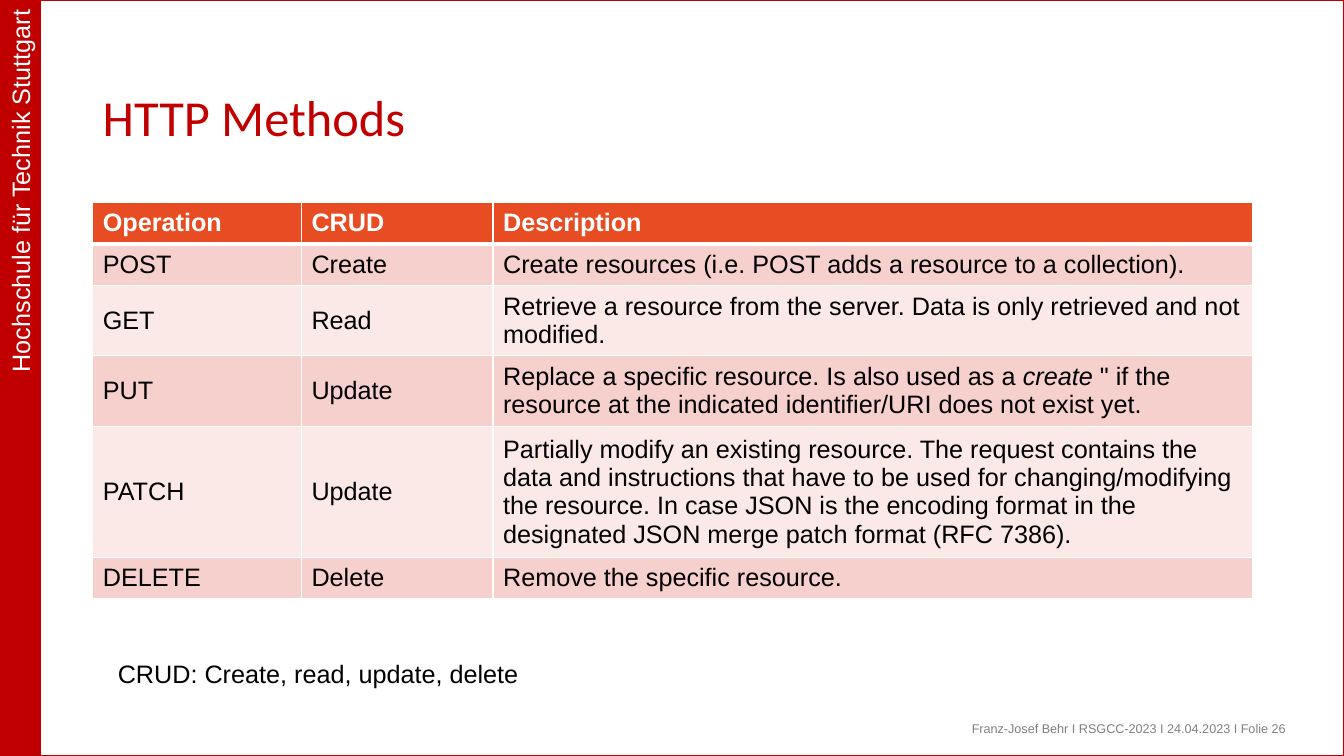
from lxml import etree
from pptx import Presentation
from pptx.dml.color import RGBColor
from pptx.enum.shapes import MSO_SHAPE
from pptx.enum.text import MSO_ANCHOR, PP_ALIGN
from pptx.oxml.ns import qn
from pptx.util import Inches, Pt

RECT = MSO_SHAPE.RECTANGLE
MIDDLE = MSO_ANCHOR.MIDDLE
LEFT, RIGHT = PP_ALIGN.LEFT, PP_ALIGN.RIGHT

COLORS = {
    "red": "C00000",
    "header": "E84C22",
    "band_dark": "F6D0CD",
    "band_light": "FBE9E8",
    "white": "FFFFFF",
    "black": "000000",
    "gray": "808080",
}
WIDTH, HEIGHT = 13.33, 7.5

COLUMN_WIDTHS = (2.07, 1.9, 7.53)
ROW_HEIGHT = 0.41
# A cell is a tuple of runs; every second run is italic.
METHODS = [
    (("Operation",), ("CRUD",), ("Description",)),
    (("POST",), ("Create",),
     ("Create resources (i.e. POST adds a resource to a collection).",)),
    (("GET",), ("Read",),
     ("Retrieve a resource from the server. Data is only retrieved and not modified.",)),
    (("PUT",), ("Update",),
     ("Replace a specific resource. Is also used as a ", "create",
      ' " if the resource at the indicated identifier/URI does not exist yet.')),
    (("PATCH",), ("Update",),
     ("Partially modify an existing resource. The request contains the data and "
      "instructions that have to be used for changing/modifying the resource. "
      "In case JSON is the encoding format in the designated JSON merge patch "
      "format (RFC 7386).",)),
    (("DELETE",), ("Delete",), ("Remove the specific resource.",)),
]


def rgb(name):
    return RGBColor.from_string(COLORS[name])


class SlideBuilder:
    def __init__(self, slide, font="Arial", size=18):
        self.slide = slide
        self.font = font
        self.size = size

    def style(self, p, color, size=None, font=None, bold=False):
        p.font.name = font or self.font
        p.font.size = Pt(size or self.size)
        p.font.bold = bold
        p.font.color.rgb = rgb(color)

    def rect(self, x, y, w, h, line_width, fill=None):
        sp = self.slide.shapes.add_shape(RECT, Inches(x), Inches(y), Inches(w), Inches(h))
        sp.shadow.inherit = False
        if fill:
            sp.fill.solid()
            sp.fill.fore_color.rgb = rgb(fill)
        else:
            sp.fill.background()
        sp.line.color.rgb = rgb("red")
        sp.line.width = Pt(line_width)
        return sp

    def sidebar(self, text, thickness):
        """Draw a bar along the left edge with its text reading upwards."""
        offset = (HEIGHT - thickness) / 2
        sp = self.rect(-offset, offset, HEIGHT, thickness, 0.75, "red")
        sp.rotation = 270
        p = sp.text_frame.paragraphs[0]
        p.text = text
        p.alignment = RIGHT
        self.style(p, "white")

    def text(self, text, x, y, w, h, color="black", size=None, font=None,
             wrap=True, anchor=None, spacing=None):
        sp = self.slide.shapes.add_textbox(Inches(x), Inches(y), Inches(w), Inches(h))
        tf = sp.text_frame
        tf.word_wrap = wrap
        tf.vertical_anchor = anchor
        p = tf.paragraphs[0]
        p.text = text
        p.alignment = LEFT
        p.line_spacing = spacing
        self.style(p, color, size, font)

    def borders(self, cell, top, bottom):
        """Give a cell white borders, 1 pt at the sides."""
        widths = {"a:lnL": 1, "a:lnR": 1, "a:lnT": top, "a:lnB": bottom}
        tc_pr = cell._tc.get_or_add_tcPr()
        for i, (tag, width) in enumerate(widths.items()):
            ln = etree.Element(qn(tag), w=str(Pt(width)))
            fill = etree.SubElement(ln, qn("a:solidFill"))
            etree.SubElement(fill, qn("a:srgbClr"), val=COLORS["white"])
            tc_pr.insert(i, ln)

    def table(self, rows, x, y):
        shape = self.slide.shapes.add_table(
            len(rows), len(COLUMN_WIDTHS), Inches(x), Inches(y),
            Inches(sum(COLUMN_WIDTHS)), Inches(ROW_HEIGHT * len(rows)))
        table = shape.table
        for column, width in zip(table.columns, COLUMN_WIDTHS):
            column.width = Inches(width)
        for i, row in enumerate(rows):
            table.rows[i].height = Inches(ROW_HEIGHT)
            band = "header" if i == 0 else ("band_light", "band_dark")[i % 2]
            for j, runs in enumerate(row):
                cell = table.cell(i, j)
                cell.vertical_anchor = MIDDLE
                cell.fill.solid()
                cell.fill.fore_color.rgb = rgb(band)
                self.borders(cell, 3 if i == 1 else 1, 3 if i == 0 else 1)
                p = cell.text_frame.paragraphs[0]
                self.style(p, "white" if i == 0 else "black", bold=i == 0)
                for k, part in enumerate(runs):
                    r = p.add_run()
                    r.text = part
                    if k % 2:
                        r.font.italic = True


def main():
    prs = Presentation()
    prs.slide_width, prs.slide_height = Inches(WIDTH), Inches(HEIGHT)
    s = SlideBuilder(prs.slides.add_slide(prs.slide_layouts[6]))

    s.sidebar("Hochschule für Technik Stuttgart", 0.4)
    s.text("Franz-Josef Behr I RSGCC-2023 I 24.04.2023 I Folie 26",
           9.54, 7.12, 3.44, 0.31, color="gray", size=9, spacing=0.9)
    s.rect(0, 0, WIDTH, HEIGHT, 1)
    s.text("HTTP Methods", 0.92, 0.55, 11.5, 1.29, color="red", size=36,
           font="Calibri", anchor=MIDDLE, spacing=0.9)
    s.table(METHODS, 0.92, 2.01)
    s.text("CRUD: Create, read, update, delete", 1.07, 6.48, 4.21, 0.4, wrap=False)

    prs.save("out.pptx")


if __name__ == "__main__":
    main()
